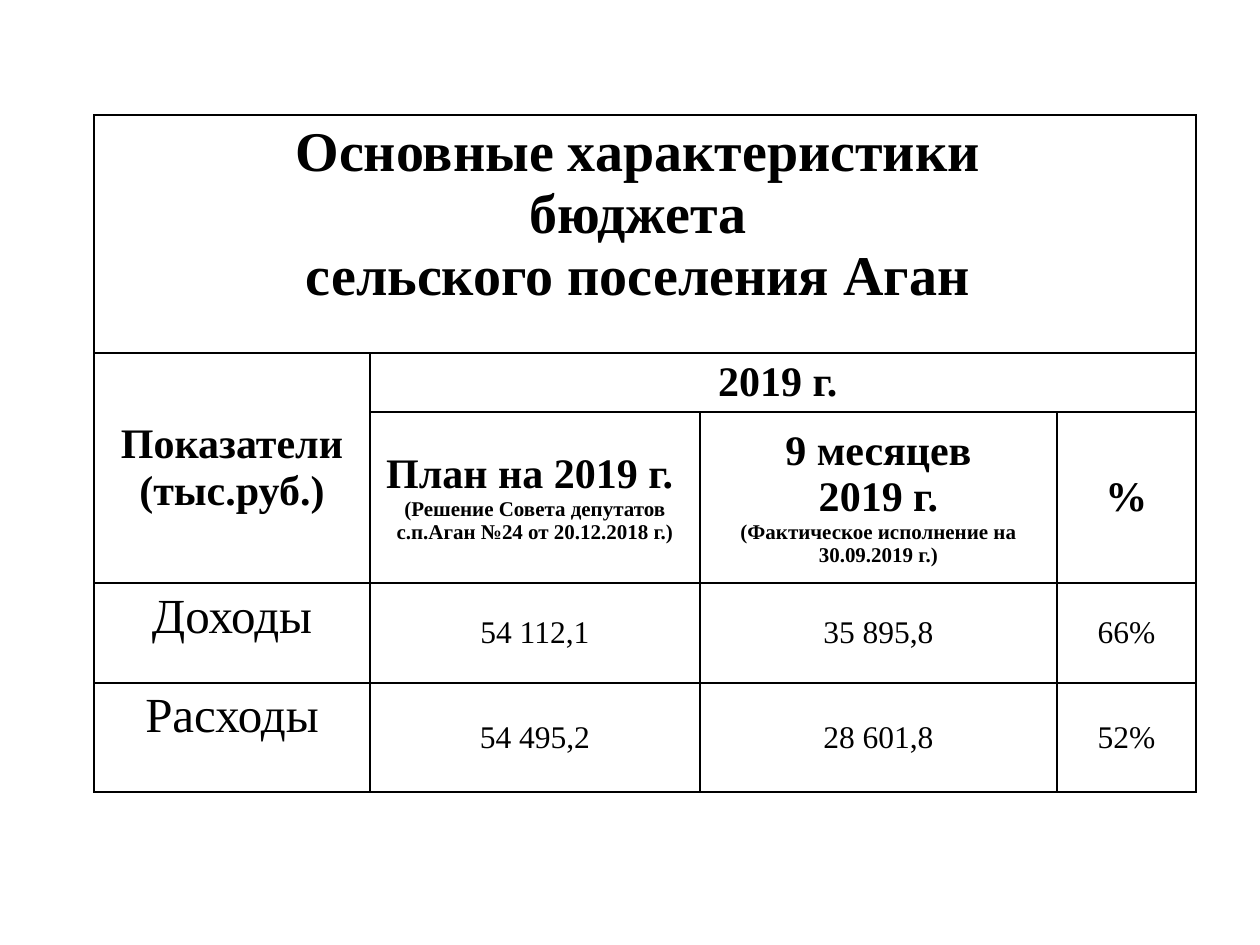
from dataclasses import dataclass

from lxml import etree
from pptx import Presentation
from pptx.dml.color import RGBColor
from pptx.enum.text import MSO_ANCHOR, PP_ALIGN
from pptx.oxml.ns import qn
from pptx.util import Emu, Pt

TOP, MIDDLE = MSO_ANCHOR.TOP, MSO_ANCHOR.MIDDLE
CENTER = PP_ALIGN.CENTER
BLACK = RGBColor(0, 0, 0)
FONT = "Times New Roman"
SCALE = 914400 / 126

LEFT, UPPER = 94, 115
COLS = [276, 330, 357, 139]
ROWS = [238, 59, 171, 100, 109]


@dataclass
class Line:
    text: str
    size: int
    bold: bool = True


@dataclass
class Entry:
    row: int
    col: int
    lines: list[Line]
    anchor: MSO_ANCHOR = MIDDLE
    rows: int = 1
    cols: int = 1


HEAD = [
    Entry(0, 0, [
        Line("Основные характеристики ", 32),
        Line("бюджета ", 32),
        Line("сельского поселения Аган ", 32),
    ], TOP, cols=4),
    Entry(1, 0, [Line("Показатели (тыс.руб.)", 24)], rows=2),
    Entry(1, 1, [Line("2019 г. ", 24)], cols=3),
    Entry(2, 1, [
        Line("План на 2019 г. ", 24),
        Line("(Решение Совета депутатов с.п.Аган №24 от 20.12.2018 г.)", 12),
    ]),
    Entry(2, 2, [
        Line("9 месяцев", 24),
        Line(" 2019 г. ", 24),
        Line("(Фактическое исполнение на 30.09.2019 г.)", 12),
    ]),
    Entry(2, 3, [Line("%", 24)]),
]
BUDGET = [
    ("Доходы", "54 112,1", "35 895,8", "66%"),
    ("Расходы", "54 495,2", "28 601,8", "52%"),
]


def px(count: int) -> Emu:
    return Emu(round(count * SCALE))


def frame(cell) -> None:
    """Give the cell thin borders and no fill."""
    props = cell._tc.get_or_add_tcPr()
    for side in ("lnL", "lnR", "lnT", "lnB"):
        edge = etree.SubElement(props, qn(f"a:{side}"), w=str(Pt(1)))
        fill = etree.SubElement(edge, qn("a:solidFill"))
        etree.SubElement(fill, qn("a:srgbClr"), val=str(BLACK))
    cell.fill.background()


def write(table, entry: Entry) -> None:
    cell = table.cell(entry.row, entry.col)
    if entry.rows > 1 or entry.cols > 1:
        cell.merge(table.cell(entry.row + entry.rows - 1,
                              entry.col + entry.cols - 1))
    cell.vertical_anchor = entry.anchor
    text = cell.text_frame
    text.text = "\n".join(line.text for line in entry.lines)
    for para, line in zip(text.paragraphs, entry.lines):
        para.alignment = CENTER
        font = para.runs[0].font
        font.name = FONT
        font.size = Pt(line.size)
        font.bold = line.bold
        font.color.rgb = BLACK


def entries() -> list[Entry]:
    body = []
    for row, values in enumerate(BUDGET, start=3):
        for col, value in enumerate(values):
            size, anchor = (18, MIDDLE) if col else (28, TOP)
            body.append(Entry(row, col, [Line(value, size, False)], anchor))
    return HEAD + body


def main() -> None:
    deck = Presentation()
    deck.slide_width, deck.slide_height = px(1260), px(945)
    slide = deck.slides.add_slide(deck.slide_layouts[6])
    table = slide.shapes.add_table(
        len(ROWS), len(COLS), px(LEFT), px(UPPER),
        px(sum(COLS)), px(sum(ROWS))).table
    table.first_row = table.horz_banding = False
    for col, width in zip(table.columns, COLS):
        col.width = px(width)
    for row, height in zip(table.rows, ROWS):
        row.height = px(height)
    for cell in table.iter_cells():
        frame(cell)
    for entry in entries():
        write(table, entry)
    deck.save("out.pptx")


if __name__ == "__main__":
    main()
